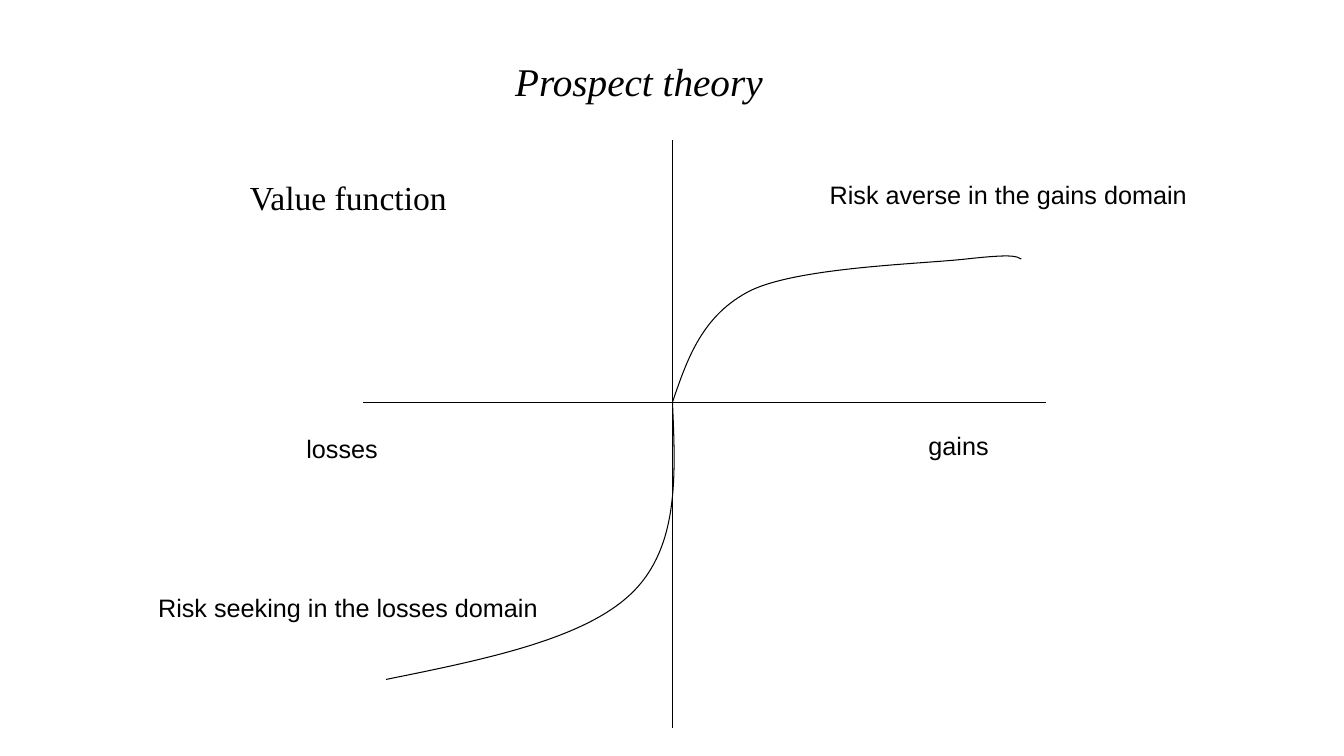
from dataclasses import dataclass

from lxml.etree import SubElement
from pptx import Presentation
from pptx.dml.color import RGBColor
from pptx.enum.shapes import MSO_CONNECTOR
from pptx.enum.text import MSO_ANCHOR, MSO_AUTO_SIZE, PP_ALIGN
from pptx.oxml.ns import qn
from pptx.shapes.autoshape import Shape
from pptx.slide import Slide
from pptx.util import Inches, Pt

BLACK = RGBColor(0x00, 0x00, 0x00)
LINE_WIDTH = Pt(0.75)

Point = tuple[float, float]
ORIGIN: Point = (6.67, 3.99)


@dataclass
class Label:
    text: str
    left: float
    top: float
    width: float
    height: float
    size: int = 18
    font: str = "Arial"
    italic: bool = False
    wrap: bool = False


@dataclass
class Axis:
    start: Point
    end: Point


@dataclass
class Curve:
    """Bezier points after the origin: two control points and an end per segment."""
    points: list[Point]


TITLE = Label("Prospect theory", 5.01, 0.52, 2.67, 0.57, 28, "Times New Roman", italic=True)

LABELS = [
    Label("Value function", 2.38, 1.71, 8.58, 0.5, 24, "Times New Roman", wrap=True),
    Label("losses", 2.94, 4.25, 0.92, 0.4),
    Label("gains", 9.11, 4.22, 0.81, 0.4),
    Label("Risk seeking in the losses domain", 1.47, 5.83, 4, 0.4),
    Label("Risk averse in the gains domain", 8.13, 1.73, 3.78, 0.4),
]

AXES = [
    Axis((ORIGIN[0], 1.39), (ORIGIN[0], 7.22)),
    Axis((3.6, ORIGIN[1]), (10.37, ORIGIN[1])),
]

GAINS_CURVE = Curve([
    (6.82, 3.55), (6.97, 3.12), (7.45, 2.88),
    (7.94, 2.65), (9.13, 2.62), (9.58, 2.57),
    (10.03, 2.52), (10.08, 2.54), (10.13, 2.57),
])
LOSSES_CURVE = Curve([
    (6.7, 4.7), (6.74, 5.42), (6.27, 5.88),
    (5.8, 6.34), (4.82, 6.54), (3.83, 6.74),
])


def fill_label(box: Shape, label: Label) -> None:
    box.left, box.top = Inches(label.left), Inches(label.top)
    box.width, box.height = Inches(label.width), Inches(label.height)
    frame = box.text_frame
    frame.word_wrap = label.wrap
    frame.auto_size = MSO_AUTO_SIZE.SHAPE_TO_FIT_TEXT
    frame.vertical_anchor = MSO_ANCHOR.TOP
    para = frame.paragraphs[0]
    para.alignment = PP_ALIGN.LEFT
    span = para.add_run()
    span.text = label.text
    span.font.size = Pt(label.size)
    span.font.name = label.font
    span.font.italic = label.italic
    span.font.color.rgb = BLACK


def add_label(page: Slide, label: Label) -> None:
    fill_label(page.shapes.add_textbox(0, 0, 0, 0), label)


def add_axis(page: Slide, axis: Axis) -> None:
    line = page.shapes.add_connector(
        MSO_CONNECTOR.STRAIGHT, *map(Inches, axis.start + axis.end))
    line.line.color.rgb = BLACK
    line.line.width = LINE_WIDTH
    SubElement(line._element.spPr, qn("a:effectLst"))


def round_segments(shape: Shape) -> None:
    """Turn every three straight pieces into one cubic Bezier segment."""
    pieces = list(shape._element.iter(qn("a:lnTo")))
    outline = pieces[0].getparent()
    for first in range(0, len(pieces), 3):
        bezier = SubElement(outline, qn("a:cubicBezTo"))
        for piece in pieces[first:first + 3]:
            bezier.append(piece[0])
            outline.remove(piece)


def add_curve(page: Slide, curve: Curve) -> None:
    builder = page.shapes.build_freeform(*map(Inches, ORIGIN))
    builder.add_line_segments(
        [(Inches(x), Inches(y)) for x, y in curve.points], close=False)
    shape = builder.convert_to_shape()
    round_segments(shape)
    shape.shadow.inherit = False
    shape.fill.background()
    shape.line.color.rgb = BLACK
    shape.line.width = LINE_WIDTH


def main() -> None:
    deck = Presentation()
    deck.slide_width, deck.slide_height = Inches(13.33), Inches(7.5)
    page = deck.slides.add_slide(deck.slide_layouts[5])

    # Title
    fill_label(page.shapes.title, TITLE)

    # Axes and value function
    for axis in AXES:
        add_axis(page, axis)
    for curve in (GAINS_CURVE, LOSSES_CURVE):
        add_curve(page, curve)

    # Labels
    for label in LABELS:
        add_label(page, label)

    deck.save("out.pptx")


if __name__ == "__main__":
    main()
